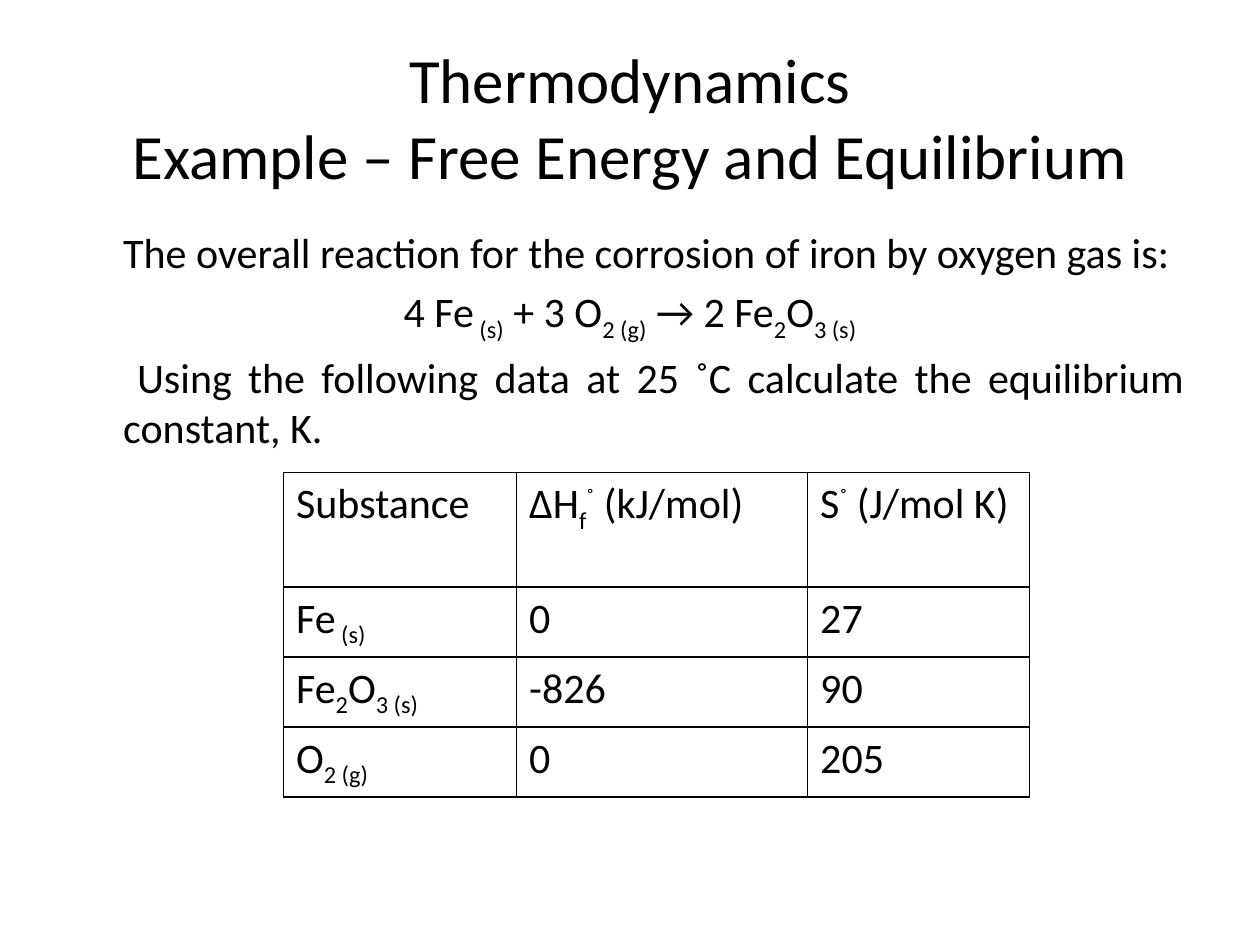
from lxml.etree import SubElement
from pptx import Presentation
from pptx.dml.color import RGBColor as RGB
from pptx.enum.text import MSO_ANCHOR as Anchor, PP_ALIGN as Align
from pptx.oxml.ns import qn
from pptx.util import Inches, Pt

THEME = {"font": "Calibri", "ink": "000000", "title": 36, "body": 24, "border": 1}
SUB, SUP = -25000, 30000

# Content: a plain string is a normal run, a tuple is (text, baseline shift)
TITLE = ["Thermodynamics", "\n", "Example – Free Energy and Equilibrium"]
IRON = ["Fe", (" (s)", SUB)]
OXYGEN = ["O", ("2 (g)", SUB)]
RUST = ["Fe", ("2", SUB), "O", ("3 (s)", SUB)]
QUESTION = [  # runs, alignment, left margin, first-line indent
    (["The overall reaction for the corrosion of iron by oxygen gas is:"],
     Align.JUSTIFY, 0.38, 0),
    (["4 ", *IRON, " + 3 ", *OXYGEN, " → 2 ", *RUST], Align.CENTER, 0, 0),
    (["Using the following data at 25 ˚C calculate the equilibrium constant, K."],
     Align.JUSTIFY, 0.38, 0.11),
]
DATA = [
    [["Substance"], ["ΔH", ("f", SUB), ("˚", SUP), " (kJ/mol)"],
     ["S", ("˚", SUP), " (J/mol K)"]],
    [IRON, ["0"], ["27"]],
    [RUST, ["-826"], ["90"]],
    [OXYGEN, ["0"], ["205"]],
]
COLUMN_WIDTHS = [1.85, 2.31, 1.76]
ROW_HEIGHTS = [0.91] + [0.55] * (len(DATA) - 1)


def write(paragraph, runs, size=THEME["body"], align=Align.LEFT,
          margin=0, indent=0, before=0):
    paragraph.alignment = align
    paragraph.space_before = Pt(before)
    properties = paragraph._p.get_or_add_pPr()
    properties.set("marL", str(Inches(margin)))
    properties.set("indent", str(Inches(indent)))
    for item in runs:
        if item == "\n":
            paragraph.add_line_break()
            continue
        text, shift = (item, 0) if isinstance(item, str) else item
        run = paragraph.add_run()
        run.text = text
        run.font.name, run.font.size = THEME["font"], Pt(size)
        run.font.color.rgb = RGB.from_string(THEME["ink"])
        if shift:
            run._r.get_or_add_rPr().set("baseline", str(shift))


def add_frame(slide, left, top, width, height, anchor=Anchor.TOP):
    box = slide.shapes.add_textbox(*map(Inches, (left, top, width, height)))
    frame = box.text_frame
    frame.word_wrap, frame.vertical_anchor = True, anchor
    return frame


def outline(cell):
    cell.fill.background()
    properties = cell._tc.get_or_add_tcPr()
    for position, side in enumerate(("lnL", "lnR", "lnT", "lnB")):
        line = SubElement(properties, qn(f"a:{side}"), w=str(Pt(THEME["border"])))
        fill = SubElement(line, qn("a:solidFill"))
        SubElement(fill, qn("a:srgbClr"), val=THEME["ink"])
        properties.insert(position, line)


def main():
    deck = Presentation()
    deck.slide_width, deck.slide_height = Inches(10), Inches(7.5)
    slide = deck.slides.add_slide(deck.slide_layouts[6])

    # Title
    heading = add_frame(slide, 0.5, 0.3, 9, 1.25, Anchor.MIDDLE)
    write(heading.paragraphs[0], TITLE, size=THEME["title"], align=Align.CENTER)

    # Question
    question = add_frame(slide, 0.5, 1.75, 9, 4.95)
    for number, (runs, align, margin, indent) in enumerate(QUESTION):
        paragraph = question.add_paragraph() if number else question.paragraphs[0]
        write(paragraph, runs, align=align, margin=margin, indent=indent,
              before=0.2 * THEME["body"])

    # Thermodynamic data
    table = slide.shapes.add_table(
        len(DATA), len(COLUMN_WIDTHS), Inches(2.25), Inches(3.75),
        Inches(sum(COLUMN_WIDTHS)), Inches(sum(ROW_HEIGHTS))).table
    table.first_row = table.horz_banding = False
    for column, width in zip(table.columns, COLUMN_WIDTHS):
        column.width = Inches(width)
    for row, height, substance in zip(table.rows, ROW_HEIGHTS, DATA):
        row.height = Inches(height)
        for cell, runs in zip(row.cells, substance):
            outline(cell)
            write(cell.text_frame.paragraphs[0], runs)

    deck.save("out.pptx")


if __name__ == "__main__":
    main()
